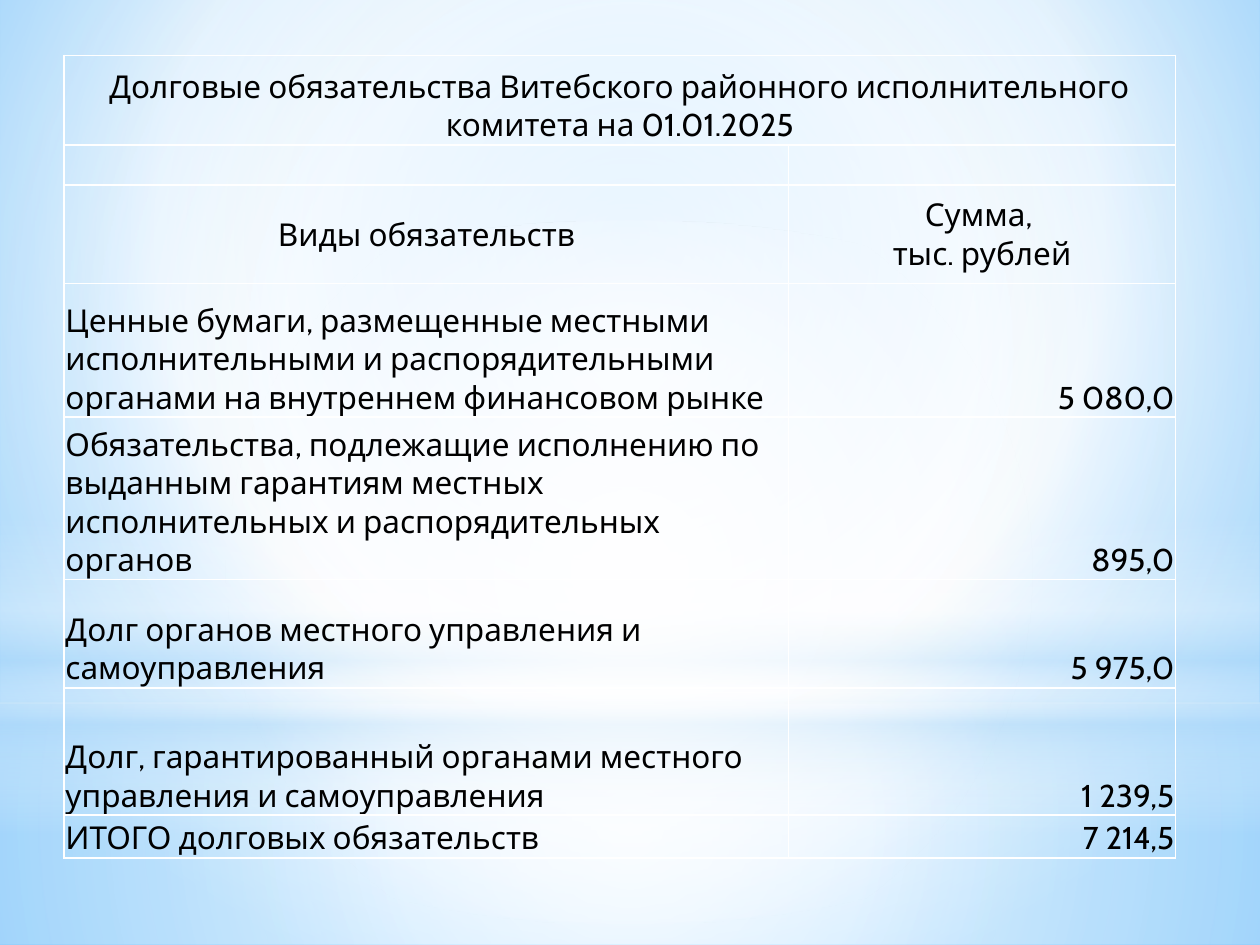
import pptx
import pptx.util
import pptx.oxml
import pptx.oxml.ns
import pptx.dml.color
import pptx.enum.shapes
import pptx.enum.text

Inches = pptx.util.Inches
Pt = pptx.util.Pt
RGBColor = pptx.dml.color.RGBColor
Shape = pptx.enum.shapes.MSO_SHAPE
Align = pptx.enum.text.PP_ALIGN
Anchor = pptx.enum.text.MSO_ANCHOR

BLACK = RGBColor(0x00, 0x00, 0x00)
WHITE = RGBColor(0xFF, 0xFF, 0xFF)
SKY = RGBColor(0x9E, 0xD5, 0xFF)
BLUE = RGBColor(0x5B, 0xB9, 0xFF)
MIST = RGBColor(0xB4, 0xDC, 0xFA)

NS = pptx.oxml.ns.nsdecls("a")
CENTER = (50, 50, 50, 50)


def apply(item, style):
    for name, value in style.items():
        setattr(item, name, value)


class Deck:
    font = {"name": "Cabin", "size": Pt(18)}
    inset = {
        "margin_left": Inches(0.01),
        "margin_right": Inches(0.01),
        "margin_top": Inches(0.01),
        "margin_bottom": Inches(0),
    }
    edge = Pt(1)

    def __init__(self):
        self.show = pptx.Presentation()
        apply(self.show, {"slide_width": Inches(10), "slide_height": Inches(7.5)})
        self.slide = self.show.slides.add_slide(self.show.slide_layouts[6])

    def blend(self, owner, fill, stops, focus=None):
        fill.gradient()
        marks = "".join(
            f'<a:gs pos="{pos * 1000}"><a:srgbClr val="{color}">'
            f'<a:alpha val="{alpha * 1000}"/></a:srgbClr></a:gs>'
            for pos, color, alpha in stops
        )
        if focus:
            left, top, right, low = (side * 1000 for side in focus)
            course = (
                f'<a:path path="circle"><a:fillToRect l="{left}" t="{top}" '
                f'r="{right}" b="{low}"/></a:path>'
            )
        else:
            course = '<a:lin ang="5400000" scaled="0"/>'
        old = owner.element.find(".//" + pptx.oxml.ns.qn("a:gradFill"))
        new = pptx.oxml.parse_xml(
            f'<a:gradFill {NS} rotWithShape="1"><a:gsLst>{marks}</a:gsLst>{course}</a:gradFill>'
        )
        old.getparent().replace(old, new)

    def back(self, stops, focus):
        self.blend(self.slide, self.slide.background.fill, stops, focus)

    def glow(self, kind, top, height, stops, focus=None):
        shape = self.slide.shapes.add_shape(
            kind, Inches(0), Inches(top), Inches(10), Inches(height)
        )
        shape.shadow.inherit = False
        shape.line.fill.background()
        self.blend(shape, shape.fill, stops, focus)

    def frame(self, cell):
        cell.fill.background()
        props = cell._tc.get_or_add_tcPr()
        for spot, side in enumerate("LRTB"):
            line = pptx.oxml.parse_xml(
                f'<a:ln{side} {NS} w="{self.edge}"><a:solidFill>'
                f'<a:srgbClr val="{WHITE}"/></a:solidFill></a:ln{side}>'
            )
            props.insert(spot, line)

    def label(self, cell, text, align, anchor):
        apply(cell, self.inset)
        cell.vertical_anchor = anchor
        cell.text = text
        for para in cell.text_frame.paragraphs:
            para.alignment = align
            for run in para.runs:
                apply(run.font, self.font)
                run.font.color.rgb = BLACK

    def table(self, left, top, cols, rows, data):
        grid = self.slide.shapes.add_table(
            len(rows), len(cols), Inches(left), Inches(top),
            Inches(sum(cols)), Inches(sum(rows)),
        ).table
        apply(grid, {"first_row": False, "horz_banding": False})
        for col, width in zip(grid.columns, cols):
            col.width = Inches(width)
        for row, height in zip(grid.rows, rows):
            row.height = Inches(height)
        grid.cell(0, 0).merge(grid.cell(0, len(cols) - 1))
        for r, line in enumerate(data):
            anchor = Anchor.MIDDLE if r == 2 else Anchor.BOTTOM
            for c, text in enumerate(line):
                align = Align.CENTER if r < 3 else (Align.LEFT, Align.RIGHT)[c]
                cell = grid.cell(r, c)
                self.label(cell, text, align, anchor)
                self.frame(cell)


def main():
    deck = Deck()
    deck.back([(0, SKY, 100), (60, WHITE, 100), (100, BLUE, 100)], (20, 10, 20, 60))
    deck.glow(Shape.RECTANGLE, 5.58, 1.92,
              [(0, WHITE, 91), (37, WHITE, 76), (100, MIST, 79)], CENTER)
    deck.glow(Shape.RECTANGLE, 0, 5.58,
              [(0, WHITE, 89), (48, WHITE, 62), (100, MIST, 79)], CENTER)
    deck.glow(Shape.RECTANGLE, 4.12, 2.5,
              [(0, WHITE, 0), (29, WHITE, 30), (45, MIST, 40),
               (55, WHITE, 26), (65, MIST, 60), (100, WHITE, 0)])
    deck.glow(Shape.OVAL, 1.75, 5.58, [(0, WHITE, 100), (56, WHITE, 0)], CENTER)

    debts = [
        ("Долговые обязательства Витебского районного исполнительного комитета на 01.01.2025", ""),
        ("", ""),
        ("Виды обязательств", "Сумма, \vтыс. рублей"),
        ("Ценные бумаги, размещенные местными исполнительными и распорядительными "
         "органами на внутреннем финансовом рынке", "5 080,0"),
        ("Обязательства, подлежащие исполнению по выданным гарантиям местных "
         "исполнительных и распорядительных органов", "895,0"),
        ("Долг органов местного управления и самоуправления", "5 975,0"),
        ("Долг, гарантированный органами местного управления и самоуправления", "1 239,5"),
        ("ИТОГО долговых обязательств", "7 214,5"),
    ]
    heights = [0.71, 0.32, 0.78, 1.06, 1.29, 0.86, 1.01, 0.34]
    deck.table(0.51, 0.44, [5.75, 3.07], heights, debts)
    deck.show.save("out.pptx")


if __name__ == "__main__":
    main()
